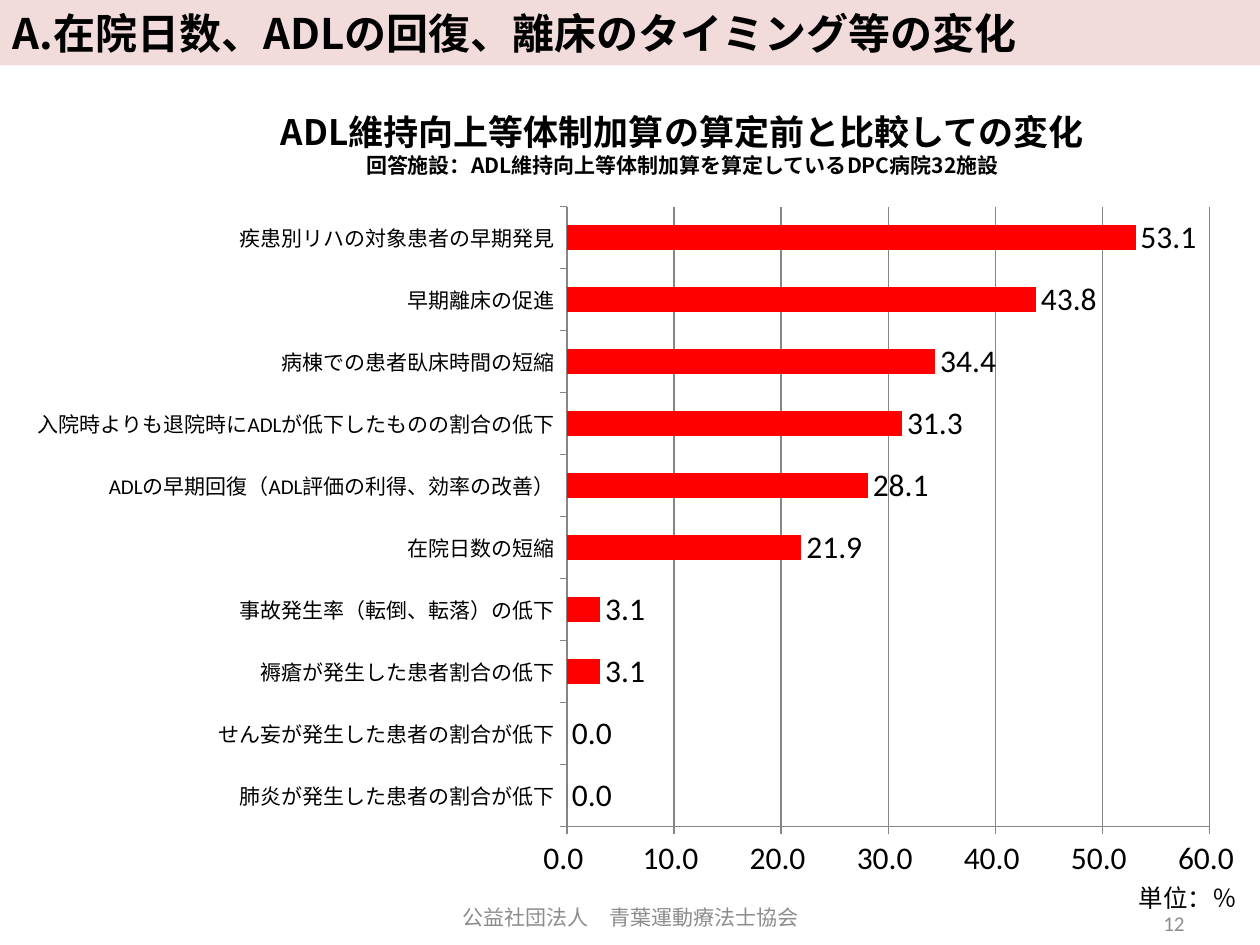
from lxml.etree import SubElement
from pptx import Presentation
from pptx.chart.data import CategoryChartData
from pptx.dml.color import RGBColor
from pptx.enum.chart import XL_CHART_TYPE, XL_LABEL_POSITION, XL_TICK_MARK
from pptx.enum.text import MSO_ANCHOR, PP_ALIGN
from pptx.oxml import parse_xml
from pptx.oxml.ns import nsdecls, qn
from pptx.util import Inches, Pt

BLACK = RGBColor(0x00, 0x00, 0x00)
GRAY = RGBColor(0x8C, 0x8C, 0x8C)
AXIS_GRAY = RGBColor(0x86, 0x86, 0x86)
PINK = RGBColor(0xF2, 0xDC, 0xDB)
RED = RGBColor(0xFF, 0x00, 0x00)
JAPANESE = "Noto Sans CJK JP"
LATIN = "Calibri"
NUMBER_FORMAT = "0.0_ "

TITLE = "A.在院日数、ADLの回復、離床のタイミング等の変化"
HEADING_FORMAT = {"name": JAPANESE, "size": Pt(20), "bold": True, "color": BLACK}
SUBHEADING_FORMAT = {**HEADING_FORMAT, "size": Pt(12)}
TITLE_FORMAT = {**HEADING_FORMAT, "size": Pt(24)}
UNIT_FORMAT = {"name": JAPANESE, "size": Pt(14), "color": BLACK}
FOOTER_FORMAT = {"name": LATIN, "size": Pt(12), "color": GRAY}

TEXT_BOXES = [
    ((2.07, 0.83, 6.69, 0.64), PP_ALIGN.CENTER, MSO_ANCHOR.TOP, True, [
        ("ADL維持向上等体制加算の算定前と比較しての変化", HEADING_FORMAT),
        ("回答施設：ADL維持向上等体制加算を算定しているDPC病院32施設", SUBHEADING_FORMAT),
    ]),
    ((8.94, 6.96, 0.99, 0.34), PP_ALIGN.LEFT, MSO_ANCHOR.TOP, False,
     [("単位：％", UNIT_FORMAT)]),
    ((7.17, 7.13, 2.33, 0.4), PP_ALIGN.RIGHT, MSO_ANCHOR.MIDDLE, True,
     [("12", FOOTER_FORMAT)]),
    ((2.52, 7.08, 4.97, 0.4), PP_ALIGN.CENTER, MSO_ANCHOR.MIDDLE, True,
     [("公益社団法人　青葉運動療法士協会", FOOTER_FORMAT)]),
]

CHANGES = [
    ("疾患別リハの対象患者の早期発見", 53.1),
    ("早期離床の促進", 43.8),
    ("病棟での患者臥床時間の短縮", 34.4),
    ("入院時よりも退院時にADLが低下したものの割合の低下", 31.3),
    ("ADLの早期回復（ADL評価の利得、効率の改善）", 28.1),
    ("在院日数の短縮", 21.9),
    ("事故発生率（転倒、転落）の低下", 3.1),
    ("褥瘡が発生した患者割合の低下", 3.1),
    ("せん妄が発生した患者の割合が低下", 0),
    ("肺炎が発生した患者の割合が低下", 0),
]
CHART_BOX = (0, 1.53, 10, 5.53)
PLOT_LAYOUT = {"x": 0.45, "y": 0.02, "w": 0.51, "h": 0.89}


def inches(box):
    return [Inches(length) for length in box]


def apply_format(font, values):
    for attribute, value in values.items():
        if attribute == "color":
            font.color.rgb = value
        else:
            setattr(font, attribute, value)


def write_paragraph(paragraph, text, alignment, values):
    paragraph.alignment = alignment
    run = paragraph.add_run()
    run.text = text
    apply_format(run.font, values)
    east_asian = SubElement(run.font._element, qn("a:ea"))
    east_asian.set("typeface", JAPANESE)


def add_title(slide):
    title = slide.shapes.title
    title.left, title.top, title.width, title.height = inches((0, 0, 10, 0.52))
    title.fill.solid()
    title.fill.fore_color.rgb = PINK
    title.text_frame.vertical_anchor = MSO_ANCHOR.MIDDLE
    write_paragraph(title.text_frame.paragraphs[0], TITLE, PP_ALIGN.LEFT, TITLE_FORMAT)


def add_text_box(slide, box, alignment, anchor, wrap, lines):
    frame = slide.shapes.add_textbox(*inches(box)).text_frame
    frame.word_wrap = wrap
    frame.vertical_anchor = anchor
    for index, (text, values) in enumerate(lines):
        paragraph = frame.add_paragraph() if index else frame.paragraphs[0]
        write_paragraph(paragraph, text, alignment, values)


def set_plot_layout(chart):
    plot_area = chart._chartSpace.chart.plotArea
    for layout in plot_area.findall(qn("c:layout")):
        plot_area.remove(layout)
    modes = '<c:layoutTarget val="inner"/><c:xMode val="edge"/><c:yMode val="edge"/>'
    sizes = "".join(f'<c:{key} val="{value}"/>' for key, value in PLOT_LAYOUT.items())
    plot_area.insert(0, parse_xml(
        f'<c:layout {nsdecls("c")}><c:manualLayout>{modes}{sizes}</c:manualLayout></c:layout>'))


def add_change_chart(slide):
    data = CategoryChartData(number_format=NUMBER_FORMAT)
    data.categories = [name for name, _ in reversed(CHANGES)]
    data.add_series("Series 1", [value for _, value in reversed(CHANGES)])
    chart = slide.shapes.add_chart(
        XL_CHART_TYPE.BAR_CLUSTERED, *inches(CHART_BOX), data).chart
    chart.has_legend = False
    chart.has_title = False
    apply_format(chart.font, {"name": LATIN, "size": Pt(18), "color": BLACK})
    set_plot_layout(chart)

    plot = chart.plots[0]
    plot.gap_width = 150
    plot.vary_by_categories = False
    series = plot.series[0]
    series.format.fill.solid()
    series.format.fill.fore_color.rgb = RED
    labels = series.data_labels
    labels.show_value = True
    labels.number_format = NUMBER_FORMAT
    labels.number_format_is_linked = False
    labels.position = XL_LABEL_POSITION.OUTSIDE_END

    category_axis, value_axis = chart.category_axis, chart.value_axis
    category_axis.tick_labels.font.size = Pt(12)
    value_axis.minimum_scale = 0
    value_axis.maximum_scale = 60
    value_axis.major_unit = 10
    value_axis.has_major_gridlines = True
    value_axis.tick_labels.number_format = NUMBER_FORMAT
    value_axis.tick_labels.number_format_is_linked = False
    for axis in (category_axis, value_axis):
        axis.major_tick_mark = XL_TICK_MARK.OUTSIDE
    for part in (category_axis, value_axis, value_axis.major_gridlines):
        part.format.line.color.rgb = AXIS_GRAY
        part.format.line.width = Pt(0.75)


def main():
    presentation = Presentation()
    presentation.slide_width, presentation.slide_height = Inches(10), Inches(7.5)
    slide = presentation.slides.add_slide(presentation.slide_layouts[5])
    add_title(slide)
    add_change_chart(slide)
    for text_box in TEXT_BOXES:
        add_text_box(slide, *text_box)
    presentation.save("out.pptx")


if __name__ == "__main__":
    main()
